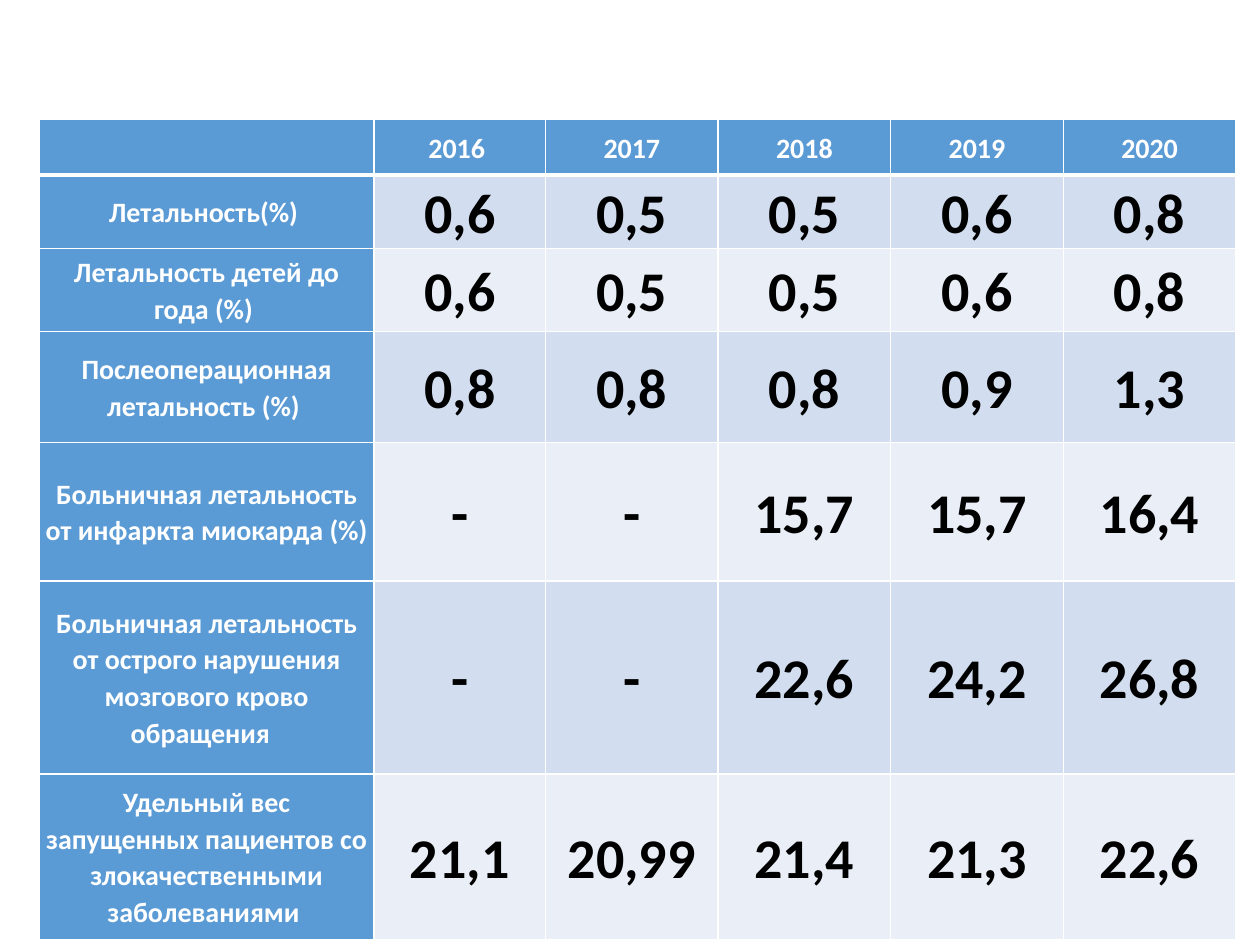
from lxml import etree
from pptx import Presentation
from pptx.dml.color import RGBColor
from pptx.enum.text import MSO_ANCHOR, PP_ALIGN
from pptx.oxml.ns import qn
from pptx.util import Inches, Pt

MIDDLE = MSO_ANCHOR.MIDDLE
CENTER = PP_ALIGN.CENTER

WHITE = RGBColor(0xFF, 0xFF, 0xFF)
BLACK = RGBColor(0x00, 0x00, 0x00)
HEADER_BLUE = RGBColor(0x5B, 0x9B, 0xD5)
BAND_DARK = RGBColor(0xD2, 0xDE, 0xEF)
BAND_LIGHT = RGBColor(0xEA, 0xEF, 0xF7)

FONT = "Calibri"
THIN, THICK = Pt(1), Pt(3)

MORTALITY = [
    ["", "2016 ", "2017", "2018", "2019", "2020"],
    ["Летальность(%) ", "0,6", "0,5", "0,5", "0,6", "0,8"],
    ["Летальность детей до года (%) ", "0,6", "0,5", "0,5", "0,6", "0,8"],
    ["Послеоперационная летальность (%) ", "0,8", "0,8", "0,8", "0,9", "1,3"],
    ["Больничная летальность от инфаркта миокарда (%) ",
     "-", "-", "15,7", "15,7", "16,4"],
    ["Больничная летальность от острого нарушения мозгового крово обращения  ",
     "-", "-", "22,6", "24,2", "26,8"],
    ["Удельный вес запущенных пациентов со злокачественными заболеваниями ",
     "21,1", "20,99", "21,4", "21,3", "22,6"],
]
COLUMN_WIDTHS = [2.66, 1.36, 1.37, 1.37, 1.37, 1.37]
ROW_HEIGHTS = [0.44, 0.44, 0.66, 0.88, 1.1, 1.53, 1.32]


def set_borders(cell, top=THIN, bottom=THIN):
    """Draw white lines on all four sides of a cell."""
    properties = cell._tc.get_or_add_tcPr()
    sides = {"a:lnL": THIN, "a:lnR": THIN, "a:lnT": top, "a:lnB": bottom}
    for side, width in sides.items():
        line = etree.SubElement(properties, qn(side), w=str(int(width)))
        fill = etree.SubElement(line, qn("a:solidFill"))
        etree.SubElement(fill, qn("a:srgbClr"), val=str(WHITE))


def write_cell(cell, text, *, size, color, fill):
    cell.fill.solid()
    cell.fill.fore_color.rgb = fill
    cell.vertical_anchor = MIDDLE
    cell.margin_left = cell.margin_right = Inches(0.05)
    cell.margin_top = cell.margin_bottom = 0
    if not text:
        return
    paragraph = cell.text_frame.paragraphs[0]
    paragraph.alignment = CENTER
    paragraph.line_spacing = 1.07
    run = paragraph.add_run()
    run.text = text
    run.font.name = FONT
    run.font.size = Pt(size)
    run.font.bold = True
    run.font.color.rgb = color


def add_mortality_table(slide, left, top, width, height):
    table = slide.shapes.add_table(
        len(MORTALITY), len(COLUMN_WIDTHS), left, top, width, height).table
    for column, column_width in zip(table.columns, COLUMN_WIDTHS):
        column.width = Inches(column_width)
    for row, row_height in zip(table.rows, ROW_HEIGHTS):
        row.height = Inches(row_height)

    for r, values in enumerate(MORTALITY):
        band = BAND_DARK if r % 2 else BAND_LIGHT
        for c, value in enumerate(values):
            cell = table.cell(r, c)
            # The header row is set off by a thicker line
            set_borders(cell, top=THICK if r == 1 else THIN,
                        bottom=THICK if r == 0 else THIN)
            if r == 0 or c == 0:
                write_cell(cell, value, size=16, color=WHITE, fill=HEADER_BLUE)
            else:
                write_cell(cell, value, size=32, color=BLACK, fill=band)


def main():
    prs = Presentation()
    prs.slide_width = Inches(10)
    prs.slide_height = Inches(7.5)
    slide = prs.slides.add_slide(prs.slide_layouts[6])

    # Mortality figures by year
    add_mortality_table(slide, Inches(0.31), Inches(0.95),
                        Inches(9.49), Inches(6.49))
    prs.save("out.pptx")


if __name__ == "__main__":
    main()
